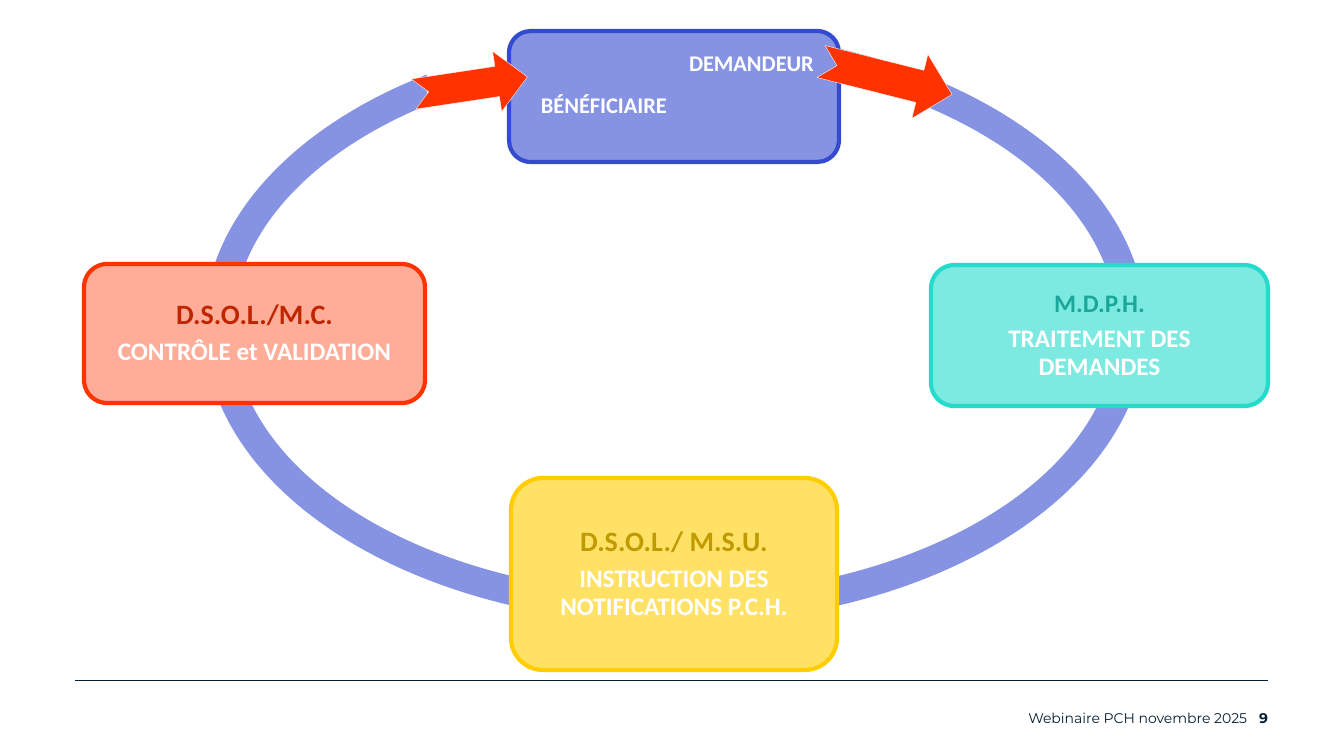
from lxml import etree
from pptx import Presentation
from pptx.dml.color import RGBColor
from pptx.enum.shapes import MSO_CONNECTOR as Connector, MSO_SHAPE as Shape
from pptx.enum.text import MSO_ANCHOR as Anchor, PP_ALIGN as Align
from pptx.oxml.ns import qn
from pptx.util import Pt

COLOURS = {
    "white": "FFFFFF", "navy": "071F32", "lilac": "8693E2", "blue": "354BCF",
    "aqua": "7CEAE0", "teal": "25DCCC", "deep teal": "1BA69A",
    "yellow": "FFE166", "gold": "FFCD00", "dark gold": "BF9A00",
    "salmon": "FFAD99", "red": "FF3300", "dark red": "BF2600",
}


class CyclePage:
    scale = 12192000 / 1344
    font = "Calibri"
    footer_font = "Montserrat"

    def __init__(self, deck):
        deck.slide_width, deck.slide_height = self.px(1344), self.px(756)
        self.page = deck.slides.add_slide(deck.slide_layouts[6])

    def px(self, length):
        return round(length * self.scale)

    def place(self, area):
        return [self.px(length) for length in area]

    def colour(self, name):
        return RGBColor.from_string(COLOURS[name])

    def shape(self, kind, area, fill, line, width=0.25, turn=0):
        shape = self.page.shapes.add_shape(kind, *self.place(area))
        shape.shadow.inherit = False
        shape.fill.solid()
        shape.fill.fore_color.rgb = self.colour(fill)
        shape.line.color.rgb = self.colour(line)
        shape.line.width = Pt(width)
        shape.rotation = turn
        return shape

    def style_text(self, para, text, size, colour, align, bold=True, font=font):
        para.text = text
        para.alignment = align
        para.font.name = font
        para.font.size = Pt(size)
        para.font.bold = bold
        para.font.color.rgb = self.colour(colour)

    def card(self, area, fill, line, heading="", heading_size=20, heading_colour="white", task=""):
        card = self.shape(Shape.ROUNDED_RECTANGLE, area, fill, line, 3)
        if not heading:
            return
        frame = card.text_frame
        frame.word_wrap = True
        frame.vertical_anchor = Anchor.MIDDLE
        frame.margin_left = frame.margin_right = self.px(9)
        first, second = frame.paragraphs[0], frame.add_paragraph()
        self.style_text(first, heading, heading_size, heading_colour, Align.CENTER)
        self.style_text(second, task, 18, "white", Align.CENTER)
        first.line_spacing = second.line_spacing = 0.9
        second.space_before = Pt(6)

    def label(self, area, text, size, colour, align=Align.LEFT, bold=True, font=font, spacing=1.0):
        box = self.page.shapes.add_textbox(*self.place(area))
        frame = box.text_frame
        frame.word_wrap = True
        frame.vertical_anchor = Anchor.MIDDLE
        frame.margin_left = frame.margin_right = self.px(10)
        para = frame.paragraphs[0]
        self.style_text(para, text, size, colour, align, bold, font)
        para.line_spacing = spacing

    def footer(self, area, text, bold):
        self.label(area, text, 10, "navy", Align.RIGHT, bold, self.footer_font, 1.15)

    def rule(self, left, right, top):
        rule = self.page.shapes.add_connector(
            Connector.STRAIGHT, *self.place((left, top, right, top)))
        rule.line.color.rgb = self.colour("navy")
        rule.line.width = Pt(0.65)
        etree.SubElement(rule._element.spPr, qn("a:effectLst"))

    def ring(self, area, thickness):
        ring = self.shape(Shape.DONUT, area, "lilac", "lilac")
        ring.line.fill.background()
        ring.adjustments[0] = thickness / min(area[2:])

    def arrow(self, area, turn):
        self.shape(Shape.NOTCHED_RIGHT_ARROW, area, "red", "white", turn=turn)


def main():
    deck = Presentation()
    cycle = CyclePage(deck)

    cycle.rule(75, 1268, 680)
    cycle.footer((583, 703, 674, 28), "Webinaire PCH novembre 2025", False)
    cycle.footer((1219, 703, 59, 28), "9", True)

    cycle.ring((204, 30, 942, 594), 29)
    cycle.shape(Shape.RECTANGLE, (427, 45, 80, 66), "white", "white")

    cycle.card((509, 31, 330, 131), "lilac", "blue")
    cycle.card((931, 265, 337, 141), "aqua", "teal",
               "M.D.P.H.", 18, "deep teal", "TRAITEMENT DES DEMANDES")
    cycle.card((511, 478, 326, 192), "yellow", "gold",
               "D.S.O.L./ M.S.U.", 20, "dark gold", "INSTRUCTION DES NOTIFICATIONS P.C.H.")
    cycle.card((84, 264, 341, 139), "salmon", "red",
               "D.S.O.L./M.C.", 20, "dark red", "CONTRÔLE et VALIDATION")

    cycle.label((679, 46, 153, 33), "DEMANDEUR", 16, "white")
    cycle.label((531, 88, 153, 33), "BÉNÉFICIAIRE", 16, "white")

    cycle.arrow((819, 45, 135, 66), 14.1)
    cycle.arrow((413, 55, 115, 61), 351.4)

    deck.save("out.pptx")


if __name__ == "__main__":
    main()
